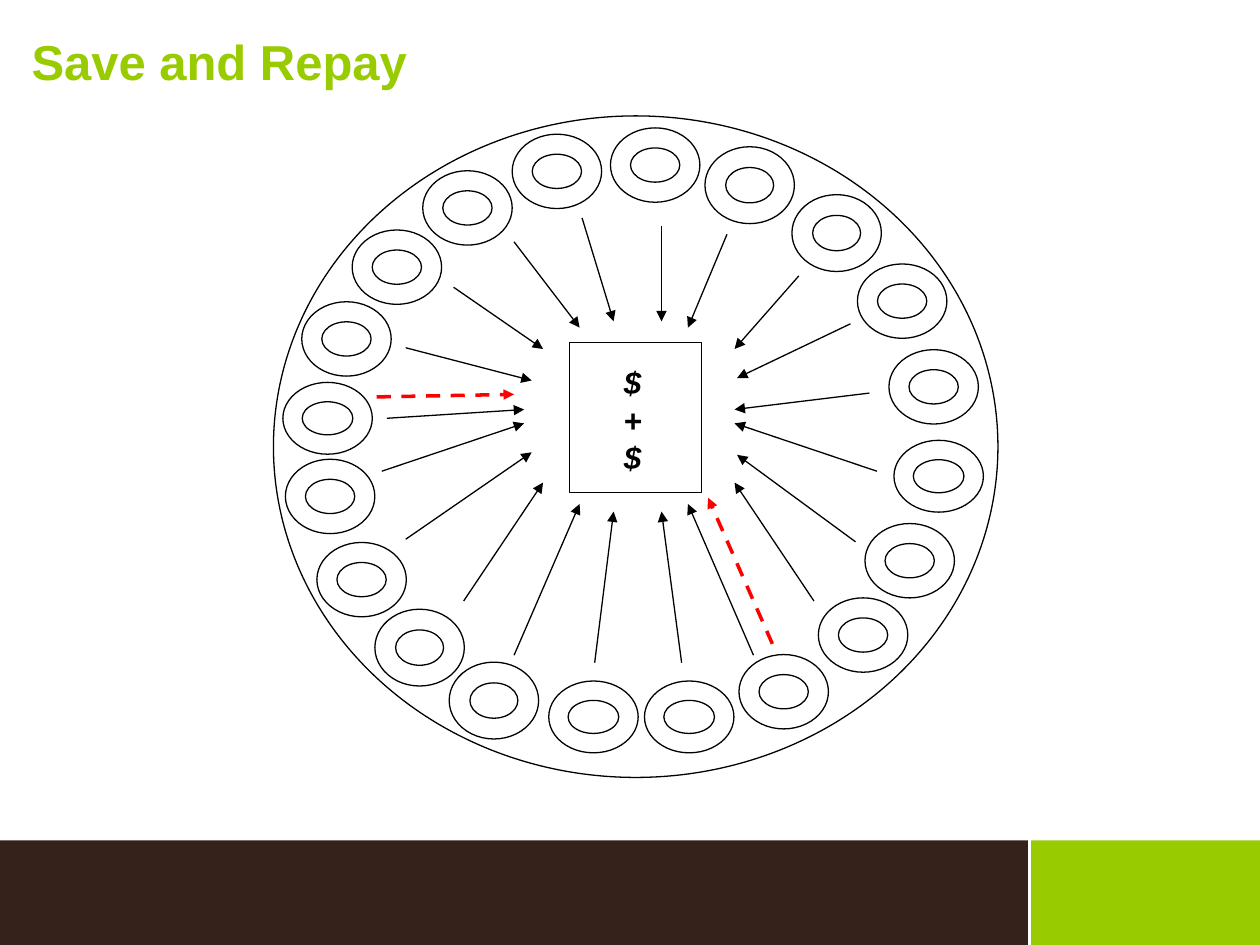
from lxml.etree import SubElement
from pptx import Presentation
from pptx.dml.color import RGBColor
from pptx.enum.dml import MSO_LINE
from pptx.enum.shapes import MSO_CONNECTOR, MSO_SHAPE
from pptx.enum.text import MSO_ANCHOR, MSO_AUTO_SIZE, PP_ALIGN
from pptx.oxml.ns import qn
from pptx.util import Inches, Pt

GREEN, BROWN, WHITE, BLACK, RED = "99CC00", "35231B", "FFFFFF", "000000", "FF0000"

presentation = Presentation()
presentation.slide_width = Inches(10)
presentation.slide_height = Inches(7.5)
column = presentation.slide_width / 100
row = presentation.slide_height / 75
slide = presentation.slides.add_slide(presentation.slide_layouts[5])


def paint(fill, color):
    fill.solid()
    fill.fore_color.rgb = RGBColor.from_string(color)


def draw_line(shapes, start, end, color, width):
    connector = shapes.add_connector(
        MSO_CONNECTOR.STRAIGHT,
        round(start[0] * column), round(start[1] * row),
        round(end[0] * column), round(end[1] * row),
    )
    paint(connector.line.fill, color)
    connector.line.width = Pt(width)
    SubElement(connector._element.spPr, qn("a:effectLst"))
    return connector


footer_top, footer_split = 66.7, 81.7
for left, right, color in [(footer_split, 100, GREEN), (0, footer_split, BROWN)]:
    band = slide.shapes.add_shape(
        MSO_SHAPE.RECTANGLE, round(left * column), round(footer_top * row),
        round((right - left) * column), round((75 - footer_top) * row),
    )
    band.shadow.inherit = False
    paint(band.fill, color)
    band.line.fill.background()
draw_line(slide.shapes, (footer_split, footer_top), (footer_split, 75), WHITE, 1.5)

member_width = 7.1
members = [
    (52, 13.1, 5.9), (59.5, 14.7, 6.1), (66.4, 18.5, 6.1), (71.6, 23.9, 5.9),
    (74.1, 30.7, 5.9), (74.5, 37.8, 5.7), (72.2, 44.5, 5.9), (68.5, 50.4, 5.9),
    (62.2, 54.9, 5.9), (54.7, 56.9, 5.7), (47.1, 56.9, 5.7), (39.2, 55.6, 6.1),
    (33.3, 51.4, 6.1), (28.7, 46, 5.9), (26.2, 39.4, 5.9), (26, 33.2, 5.7),
    (27.5, 26.9, 5.9), (31.5, 21.2, 5.9), (37.1, 16.5, 5.9), (44.2, 13.6, 5.9),
]
outlines = [
    (MSO_SHAPE.OVAL, 50.45, 35.45, 57.5, 52.5),
    (MSO_SHAPE.RECTANGLE, 50.45, 33.15, 10.5, 11.9),
] + [(MSO_SHAPE.DONUT, x, y, member_width, height) for x, y, height in members]

diagram = slide.shapes.add_group_shape().shapes
for preset, center_x, center_y, width, height in outlines:
    shape = diagram.add_shape(
        preset, round((center_x - width / 2) * column), round((center_y - height / 2) * row),
        round(width * column), round(height * row),
    )
    if preset == MSO_SHAPE.DONUT:
        shape.adjustments[0] = 0.27
    shape.shadow.inherit = False
    paint(shape.fill, WHITE)
    paint(shape.line.fill, BLACK)
    shape.line.width = Pt(0.75)

savings = [
    ((59.8, 52), (54.6, 40)), ((54.1, 52.6), (52.5, 40.6)),
    ((47.2, 52.6), (48.7, 40.6)), ((40.8, 52), (46, 40)),
    ((36.8, 47.7), (43.1, 38.3)), ((64.6, 47.7), (58.3, 38.3)),
    ((32.2, 42.8), (42.2, 35.9)), ((67.9, 43), (58.5, 36.1)),
    ((69.6, 37.4), (58.3, 33.6)), ((30.3, 37.4), (41.6, 33.6)),
    ((57.7, 18.6), (54.6, 26)), ((52.5, 17.9), (52.5, 25.5)),
    ((46.2, 17.3), (48.7, 25.5)), ((40.8, 19.2), (46, 26)),
    ((36, 22.8), (43.1, 27.7)), ((63.4, 21.9), (58.3, 27.7)),
    ((32.2, 27.6), (42.2, 30.2)), ((67.5, 25.7), (58.5, 30)),
    ((69, 31.2), (58.3, 32.5)), ((30.7, 33.2), (41.6, 32.5)),
]
repayments = [((29.9, 31.5), (40.8, 31.3)), ((61.3, 51.1), (56.2, 39.5))]
for arrows, color, width, dash in [
    (savings, BLACK, 0.75, MSO_LINE.SOLID),
    (repayments, RED, 2, MSO_LINE.DASH),
]:
    for start, end in arrows:
        arrow = draw_line(diagram, start, end, color, width)
        arrow.line.dash_style = dash
        SubElement(arrow._element.spPr.find(qn("a:ln")), qn("a:tailEnd"), type="triangle")

fund = diagram.add_textbox(
    round(46.6 * column), round(28.3 * row), round(7.9 * column), round(10.8 * row)
).text_frame
fund.word_wrap = True
title = slide.shapes.title
title.left, title.top = round(2.5 * column), round(2.5 * row)
title.width, title.height = round(90 * column), round(9.2 * row)
heading = title.text_frame
heading.margin_left = heading.margin_right = heading.margin_top = heading.margin_bottom = 0
heading.vertical_anchor = MSO_ANCHOR.TOP
heading.word_wrap = True
heading.auto_size = MSO_AUTO_SIZE.NONE

for frame, lines, size, color, italic, alignment in [
    (fund, ["$ ", "+ ", "$ "], 18, BLACK, True, PP_ALIGN.CENTER),
    (heading, ["Save and Repay"], 28, GREEN, False, PP_ALIGN.LEFT),
]:
    for index, line in enumerate(lines):
        paragraph = frame.add_paragraph() if index else frame.paragraphs[0]
        paragraph.alignment = alignment
        run = paragraph.add_run()
        run.text = line
        run.font.name = "Arial"
        run.font.size = Pt(size)
        run.font.bold = True
        run.font.italic = italic
        paint(run.font.fill, color)

presentation.save("out.pptx")
